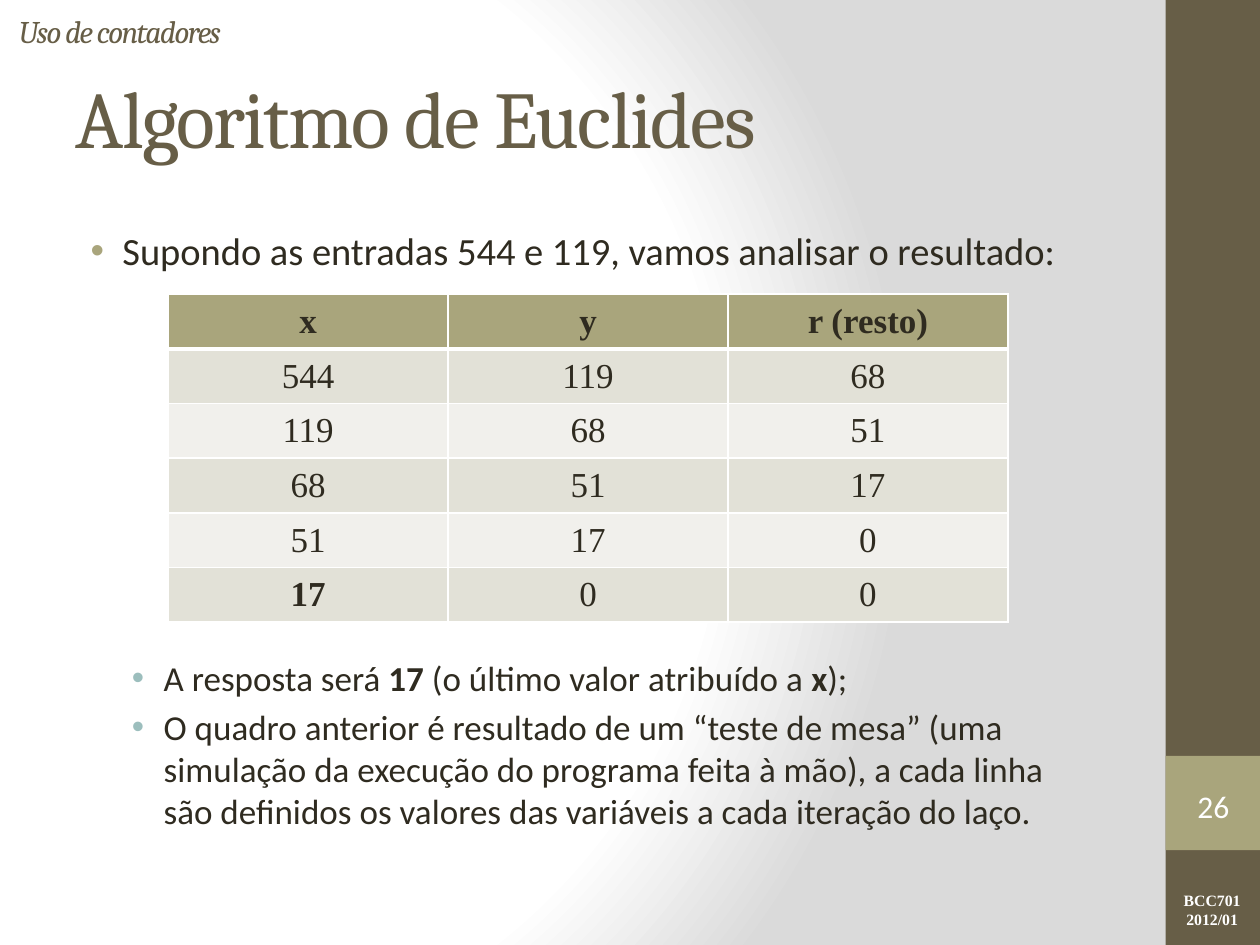
from dataclasses import dataclass

from lxml.etree import SubElement
from pptx import Presentation
from pptx.dml.color import RGBColor
from pptx.enum.shapes import MSO_SHAPE
from pptx.enum.text import MSO_ANCHOR, MSO_AUTO_SIZE, PP_ALIGN
from pptx.oxml import parse_xml
from pptx.oxml.ns import nsdecls, qn
from pptx.util import Cm, Pt


@dataclass(frozen=True)
class Theme:
    brown: str = "675E47"
    olive: str = "A9A57C"
    teal: str = "9CBEBD"
    ink: str = "2F2B20"
    white: str = "FFFFFF"
    grey: str = "DADADA"
    bands: tuple = ("E2E1D7", "F1F0EC")
    head_font: str = "Cambria"
    body_font: str = "Calibri"
    table_font: str = "Times New Roman"
    title: int = 46
    lead: int = 22
    body: int = 20
    label: int = 18
    small: int = 9


T = Theme()
ROWS = [
    ("x", "y", "r (resto)"),
    ("544", "119", "68"),
    ("119", "68", "51"),
    ("68", "51", "17"),
    ("51", "17", "0"),
    ("*17*", "0", "0"),
]


def put_text(tf, text, font=T.body_font, size=T.body, color=T.ink, bold=False,
             italic=False, align=PP_ALIGN.LEFT, anchor=MSO_ANCHOR.TOP,
             spacing=0, bullet=None, indent=0, before=0):
    """Write one paragraph per line; words between asterisks are bold."""
    tf.word_wrap = True
    tf.vertical_anchor = anchor
    for i, line in enumerate(text.split("\n")):
        p = tf.add_paragraph() if i else tf.paragraphs[0]
        p.alignment = align
        if i and before:
            p.space_before = Pt(before)
        if bullet:
            add_bullet(p, bullet, indent)
        for j, part in enumerate(line.split("*")):
            if not part:
                continue
            r = p.add_run()
            r.text = part
            r.font.name, r.font.size = font, Pt(size)
            r.font.bold, r.font.italic = bold or j % 2 == 1, italic
            r.font.color.rgb = RGBColor.from_string(color)
            if spacing:
                r.font._element.set("spc", str(spacing * 100))


def add_bullet(p, color, indent):
    pPr = p._p.get_or_add_pPr()
    pPr.set("marL", str(Cm(indent)))
    pPr.set("indent", str(-Cm(0.64)))
    SubElement(SubElement(pPr, qn("a:buClr")), qn("a:srgbClr")).set("val", color)
    SubElement(pPr, qn("a:buFont")).set("typeface", "Arial")
    SubElement(pPr, qn("a:buChar")).set("char", "•")


def add_box(s, x, y, w, h, text, **fmt):
    sp = s.shapes.add_textbox(Cm(x), Cm(y), Cm(w), Cm(h))
    put_text(sp.text_frame, text, **fmt)


def add_block(s, shape, x, y, w, h, fill=None):
    sp = s.shapes.add_shape(shape, Cm(x), Cm(y), Cm(w), Cm(h))
    sp.shadow.inherit = False
    sp.line.fill.background()
    if fill:
        sp.fill.solid()
        sp.fill.fore_color.rgb = RGBColor.from_string(fill)
    else:
        sp.fill.background()
    return sp


def set_background(s):
    s.background.fill.solid()
    bgPr = s.element.xpath(".//p:bgPr")[0]
    stops = "".join(
        f'<a:gs pos="{pos * 1000}"><a:srgbClr val="{color}"/></a:gs>'
        for pos, color in ((0, T.white), (75, T.white), (100, T.grey)))
    bgPr.replace(bgPr[0], parse_xml(
        f'<a:gradFill {nsdecls("a")} rotWithShape="1"><a:gsLst>{stops}</a:gsLst>'
        '<a:path path="circle"><a:fillToRect l="20000" t="50000" r="100000" '
        'b="50000"/></a:path></a:gradFill>'))


def set_borders(cell, **widths):
    tcPr = cell._tc.get_or_add_tcPr()
    for side in "LRTB":
        ln = SubElement(tcPr, qn(f"a:ln{side}"))
        ln.set("w", str(Pt(widths.get(side, 1))))
        fill = SubElement(ln, qn("a:solidFill"))
        SubElement(fill, qn("a:srgbClr")).set("val", T.white)


def add_values_table(s, x, y, w, h):
    table = s.shapes.add_table(len(ROWS), len(ROWS[0]),
                               Cm(x), Cm(y), Cm(w), Cm(h)).table
    for i, row in enumerate(ROWS):
        for j, value in enumerate(row):
            cell = table.cell(i, j)
            # The rule under the header is thicker
            edges = {0: {"B": 3}, 1: {"T": 3}}.get(i, {})
            set_borders(cell, **edges)
            cell.fill.solid()
            cell.fill.fore_color.rgb = RGBColor.from_string(
                T.bands[(i - 1) % 2] if i else T.olive)
            put_text(cell.text_frame, value, font=T.table_font, bold=i == 0,
                     align=PP_ALIGN.CENTER)
            cell.vertical_anchor = MSO_ANCHOR.MIDDLE


def add_sidebar(s):
    add_block(s, MSO_SHAPE.RECTANGLE, 23.5, 0, 1.9, 19.05, T.brown)
    add_block(s, MSO_SHAPE.RECTANGLE, 23.5, 15.24, 1.9, 1.9, T.olive)
    add_box(s, 23.52, 17.83, 1.83, 1.02, "BCC701\n2012/01", font=T.table_font,
            size=T.small, color=T.white, bold=True, align=PP_ALIGN.CENTER)
    number = add_block(s, MSO_SHAPE.DOUBLE_BRACKET, 23.7, 15.7, 1.52, 1.09)
    tf = number.text_frame
    tf.margin_left = tf.margin_right = tf.margin_top = tf.margin_bottom = 0
    put_text(tf, "26", size=T.label, color=T.white, align=PP_ALIGN.CENTER,
             anchor=MSO_ANCHOR.MIDDLE)


def set_title(s, text):
    sp = s.shapes.title
    sp.left, sp.top, sp.width, sp.height = Cm(1.27), Cm(0.76), Cm(21.16), Cm(3.18)
    sp.text_frame.auto_size = MSO_AUTO_SIZE.NONE
    put_text(sp.text_frame, text, font=T.head_font, size=T.title, color=T.brown,
             anchor=MSO_ANCHOR.MIDDLE, spacing=-1)


def main():
    prs = Presentation()
    prs.slide_width, prs.slide_height = Cm(25.4), Cm(19.05)
    s = prs.slides.add_slide(prs.slide_layouts[5])
    set_background(s)

    # Sidebar with course and slide number
    add_sidebar(s)

    # Headings
    set_title(s, "Algoritmo de Euclides")
    add_box(s, 0.13, 0.2, 21.13, 0.86, "Uso de contadores", font=T.head_font,
            size=T.label, color=T.brown, italic=True, spacing=-1,
            anchor=MSO_ANCHOR.MIDDLE)

    # Lead sentence, trace table and conclusions
    add_box(s, 1.27, 4.45, 21.16, 1.2,
            "Supondo as entradas 544 e 119, vamos analisar o resultado:",
            size=T.lead, bullet=T.olive, indent=0.95)
    add_values_table(s, 3.39, 5.93, 16.93, 6.22)
    add_box(s, 1.27, 13.1, 21.16, 4.68,
            "A resposta será *17* (o último valor atribuído a *x*);\n"
            "O quadro anterior é resultado de um “teste de mesa” (uma simulação "
            "da execução do programa feita à mão), a cada linha são definidos os "
            "valores das variáveis a cada iteração do laço.",
            bullet=T.teal, indent=1.78, before=4)

    prs.save("out.pptx")


if __name__ == "__main__":
    main()
